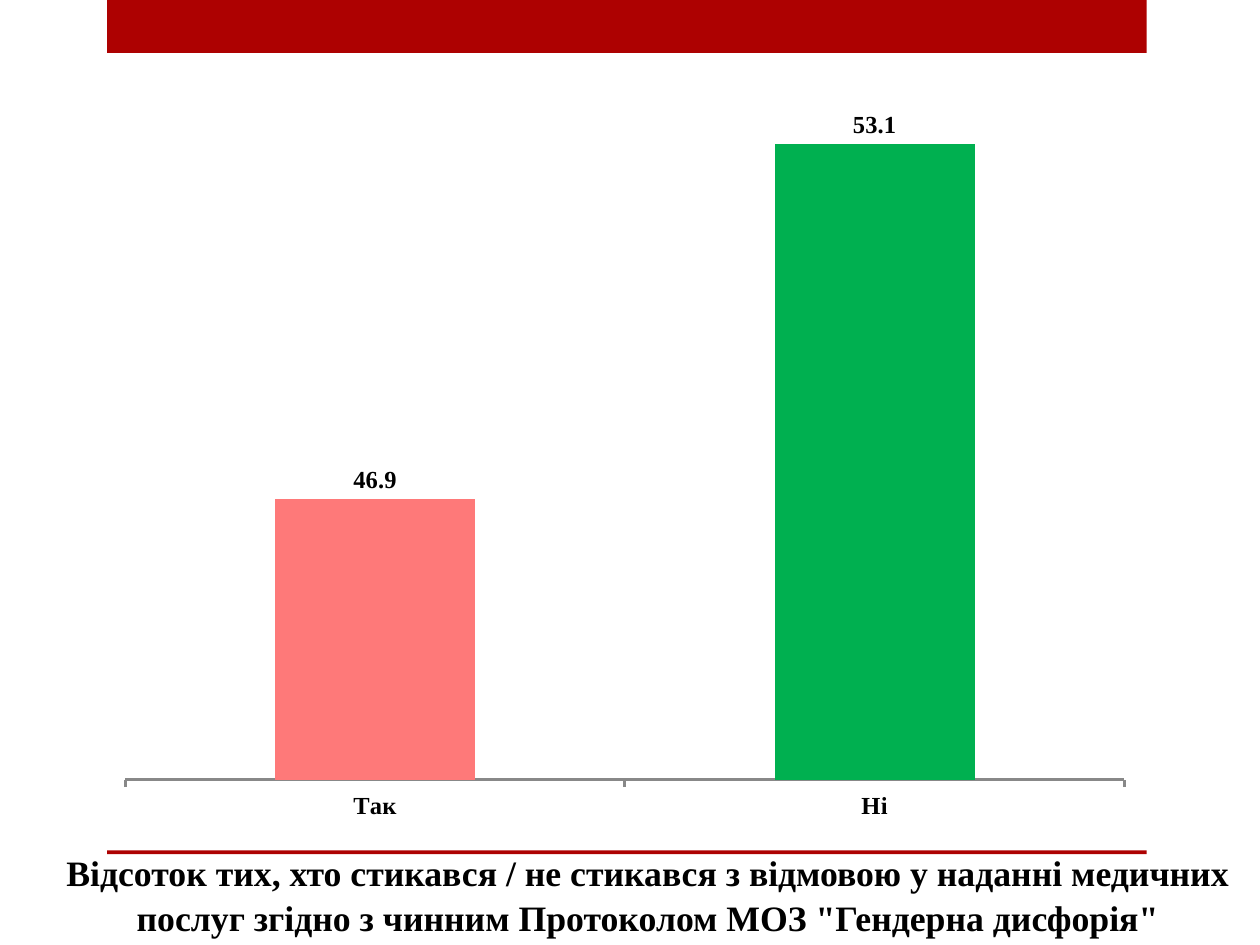
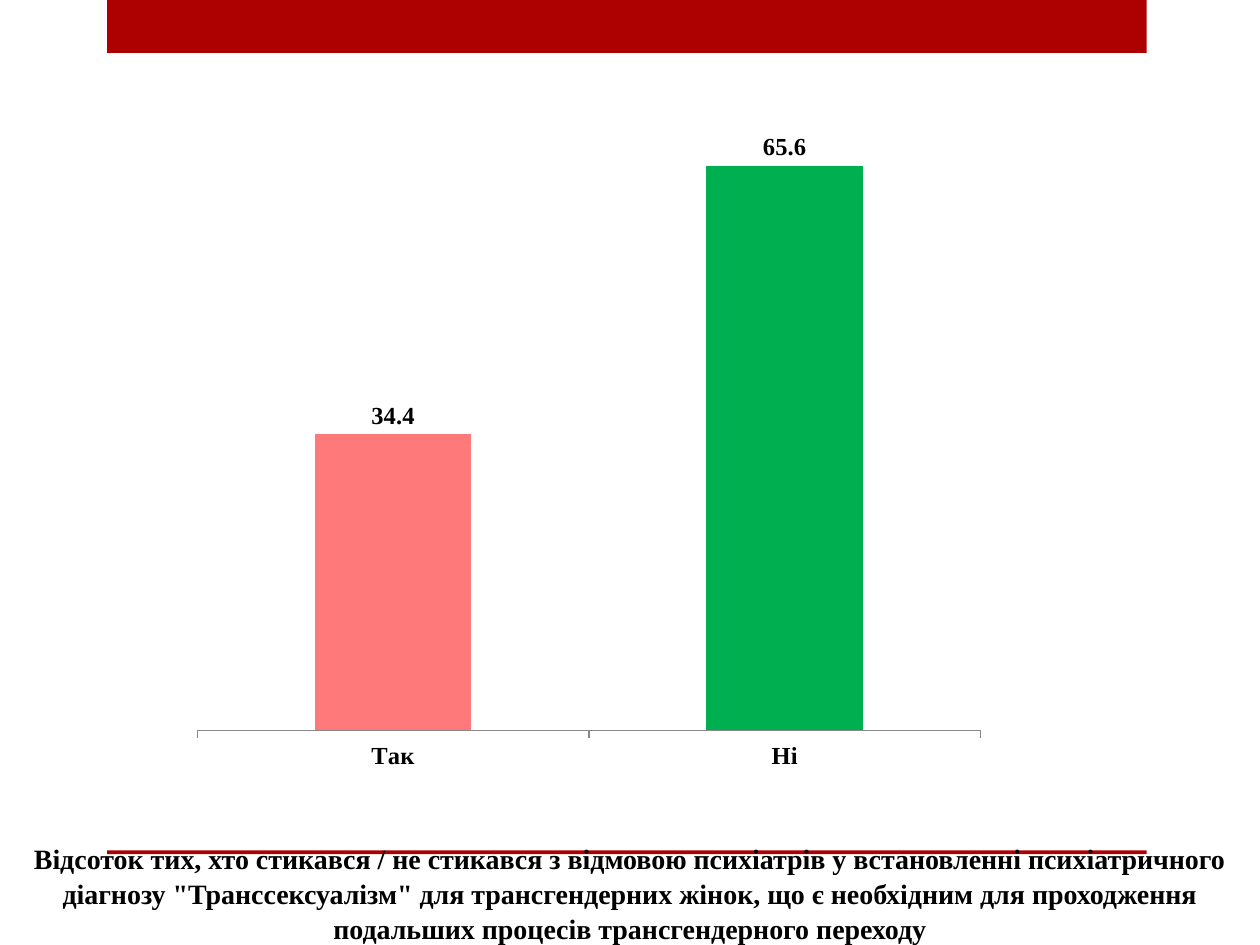
from lxml import etree
from pptx import Presentation
from pptx.chart.data import CategoryChartData
from pptx.dml.color import RGBColor
from pptx.enum.chart import XL_CHART_TYPE, XL_LABEL_POSITION, XL_TICK_LABEL_POSITION, XL_TICK_MARK
from pptx.enum.shapes import MSO_SHAPE
from pptx.enum.text import MSO_ANCHOR, PP_ALIGN
from pptx.oxml import parse_xml
from pptx.oxml.ns import nsdecls
from pptx.util import Inches, Pt

FONT = "Times New Roman"
RED, BLACK, GREY = "AD0101", "000000", "888888"
ANSWERS = {"Так": "FE7979", "Ні": "00B050"}
BANDS = [(0.85, 0, 8.25, 0.42), (0.85, 6.75, 8.25, 0.03)]

SLIDES = [
    dict(
        caption='Відсоток тих, хто стикався / не стикався з відмовою у наданні медичних '
                'послуг згідно з чинним Протоколом МОЗ "Гендерна дисфорія"',
        caption_box=(0.28, 6.8, 9.72, 0.7), size=20.4,
        chart_box=(0.83, 0.67, 8.26, 6), plot=(0.02, 0.01, 0.96, 0.91),
        values=(46.9, 53.1), scale=(42, 54), axis_width=1.75,
    ),
    dict(
        caption='Відсоток тих, хто стикався / не стикався з відмовою психіатрів у встановленні '
                'психіатричного діагнозу "Транссексуалізм" для трансгендерних жінок, що є '
                'необхідним для проходження подальших процесів трансгендерного переходу',
        caption_box=(0, 6.74, 10, 0.81), size=16,
        chart_box=(0.83, 0.67, 8.18, 5.76), plot=(0.09, 0.06, 0.76, 0.83),
        values=(34.4, 65.6), scale=(0, 70), axis_width=0.75,
    ),
]


def rgb(color):
    return RGBColor.from_string(color)


def inches(box):
    return [Inches(v) for v in box]


def style_font(font, size, color=BLACK, bold=True):
    font.name, font.size, font.bold = FONT, Pt(size), bold
    font.color.rgb = rgb(color)


def add_text(s, text, box, size, color=BLACK, bold=True, align=PP_ALIGN.CENTER):
    tf = s.shapes.add_textbox(*inches(box)).text_frame
    tf.word_wrap = True
    tf.vertical_anchor = MSO_ANCHOR.BOTTOM
    p = tf.paragraphs[0]
    p.alignment = align
    p.line_spacing = 1.05
    r = p.add_run()
    r.text = text
    style_font(r.font, size, color, bold)


def add_band(s, box):
    sp = s.shapes.add_shape(MSO_SHAPE.RECTANGLE, *inches(box))
    sp.shadow.inherit = False
    sp.fill.solid()
    sp.fill.fore_color.rgb = rgb(RED)
    sp.line.fill.background()


def set_plot_area(chart, plot):
    area = chart.plots[0]._element.getparent()
    for old in area.findall("{*}layout"):
        area.remove(old)
    layout = parse_xml(f'<c:layout {nsdecls("c")}><c:manualLayout/></c:layout>')
    settings = [("layoutTarget", "inner"), ("xMode", "edge"), ("yMode", "edge")]
    settings += zip("xywh", plot)
    ns = layout.nsmap["c"]
    for tag, value in settings:
        etree.SubElement(layout[0], f"{{{ns}}}{tag}").set("val", str(value))
    area.insert(0, layout)


def add_bar_chart(s, box, values, scale, plot, axis_width):
    data = CategoryChartData(number_format="###0.0")
    data.categories = list(ANSWERS)
    data.add_series("Series 1", values)
    chart = s.shapes.add_chart(XL_CHART_TYPE.COLUMN_CLUSTERED, *inches(box), data).chart
    chart.has_legend = chart.has_title = False
    style_font(chart.font, 14)

    value_axis = chart.value_axis
    value_axis.minimum_scale, value_axis.maximum_scale = scale
    value_axis.has_major_gridlines = False
    value_axis.visible = False
    cat_axis = chart.category_axis
    cat_axis.major_tick_mark = XL_TICK_MARK.OUTSIDE
    cat_axis.tick_label_position = XL_TICK_LABEL_POSITION.LOW
    cat_axis.format.line.color.rgb = rgb(GREY)
    cat_axis.format.line.width = Pt(axis_width)

    bars = chart.plots[0]
    bars.gap_width = 150
    bars.vary_by_categories = False
    series = bars.series[0]
    series.format.fill.solid()
    series.format.fill.fore_color.rgb = rgb(RED)
    for i, color in enumerate(ANSWERS.values()):
        fill = series.points[i].format.fill
        fill.solid()
        fill.fore_color.rgb = rgb(color)
    labels = series.data_labels
    labels.show_value = True
    labels.number_format, labels.number_format_is_linked = "###0.0", False
    labels.position = XL_LABEL_POSITION.OUTSIDE_END
    style_font(labels.font, 14)
    set_plot_area(chart, plot)


def main():
    prs = Presentation()
    prs.slide_width, prs.slide_height = Inches(10), Inches(7.5)
    for d in SLIDES:
        s = prs.slides.add_slide(prs.slide_layouts[6])
        for band in BANDS:
            add_band(s, band)
        add_text(s, d["caption"], d["caption_box"], d["size"])
        add_bar_chart(s, d["chart_box"], d["values"], d["scale"], d["plot"], d["axis_width"])
    prs.save("out.pptx")


if __name__ == "__main__":
    main()
